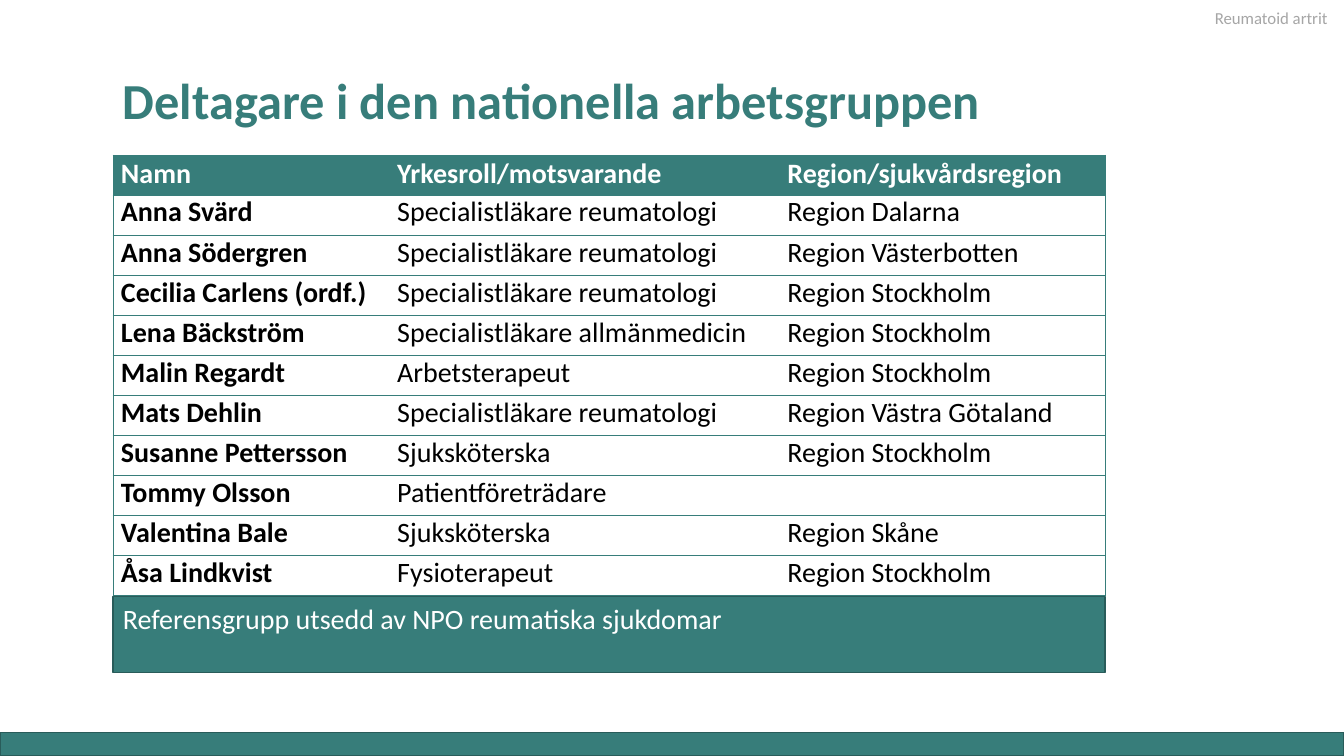
from lxml.etree import SubElement
from pptx import Presentation
from pptx.dml.color import RGBColor
from pptx.enum.shapes import MSO_SHAPE
from pptx.enum.text import MSO_ANCHOR, PP_ALIGN
from pptx.oxml.ns import qn
from pptx.util import Inches, Pt

COLORS = {"teal": "377D7A", "dark_teal": "295C5A", "white": "FFFFFF",
          "black": "000000", "gray": "A6A6A6"}
FONT = "Calibri"

TOPIC = "Reumatoid artrit"
TITLE = "Deltagare i den nationella arbetsgruppen"
HEADER = ("Namn", "Yrkesroll/motsvarande", "Region/sjukvårdsregion")
MEMBERS = [
    ("Anna Svärd", "Specialistläkare reumatologi", "Region Dalarna"),
    ("Anna Södergren", "Specialistläkare reumatologi", "Region Västerbotten"),
    ("Cecilia Carlens (ordf.)", "Specialistläkare reumatologi", "Region Stockholm"),
    ("Lena Bäckström", "Specialistläkare allmänmedicin", "Region Stockholm"),
    ("Malin Regardt", "Arbetsterapeut", "Region Stockholm"),
    ("Mats Dehlin", "Specialistläkare reumatologi", "Region Västra Götaland"),
    ("Susanne Pettersson", "Sjuksköterska", "Region Stockholm"),
    ("Tommy Olsson", "Patientföreträdare", ""),
    ("Valentina Bale", "Sjuksköterska", "Region Skåne"),
    ("Åsa Lindkvist", "Fysioterapeut", "Region Stockholm"),
]
REFERENCE_GROUP = "Referensgrupp utsedd av NPO reumatiska sjukdomar"

SLIDE_WIDTH, SLIDE_HEIGHT = 13.33, 7.5
TABLE_LEFT, TABLE_TOP, TABLE_HEIGHT = 1.12, 1.54, 4.37
COLUMN_WIDTHS = (2.74, 3.87, 3.23)
TABLE_WIDTH = sum(COLUMN_WIDTHS)
FOOTER_HEIGHT = 0.23


def rgb(name):
    return RGBColor.from_string(COLORS[name])


def write(text_frame, text, size, color, bold=False, spacing=None):
    text_frame.text = text
    paragraph = text_frame.paragraphs[0]
    paragraph.alignment = PP_ALIGN.LEFT
    if spacing:
        paragraph.line_spacing = spacing
    for run in paragraph.runs:
        run.font.name = FONT
        run.font.size = Pt(size)
        run.font.bold = bold
        run.font.color.rgb = rgb(color)


def add_text(slide, box, text, size, color, **style):
    shape = slide.shapes.add_textbox(*map(Inches, box))
    shape.text_frame.word_wrap = True
    write(shape.text_frame, text, size, color, **style)
    return shape


def add_bar(slide, box):
    shape = slide.shapes.add_shape(MSO_SHAPE.RECTANGLE, *map(Inches, box))
    shape.shadow.inherit = False
    shape.fill.solid()
    shape.fill.fore_color.rgb = rgb("teal")
    shape.line.color.rgb = rgb("dark_teal")
    shape.line.width = Pt(1)
    return shape


def set_borders(cell, visible_sides):
    """Draw thin teal borders on the given sides (of L, R, T, B) and none elsewhere."""
    properties = cell._tc.get_or_add_tcPr()
    for side in "LRTB":
        line = SubElement(properties, qn(f"a:ln{side}"), w=str(Pt(0.5)))
        if side in visible_sides:
            fill = SubElement(line, qn("a:solidFill"))
            SubElement(fill, qn("a:srgbClr"), val=COLORS["teal"])
        else:
            SubElement(line, qn("a:noFill"))


def add_member_table(slide):
    rows = [HEADER, *MEMBERS]
    box = (TABLE_LEFT, TABLE_TOP, TABLE_WIDTH, TABLE_HEIGHT)
    table = slide.shapes.add_table(len(rows), len(HEADER), *map(Inches, box)).table
    table.horz_banding = False
    for column, width in zip(table.columns, COLUMN_WIDTHS):
        column.width = Inches(width)
    for row_index, values in enumerate(rows):
        table.rows[row_index].height = Inches(TABLE_HEIGHT / len(rows))
        is_header = row_index == 0
        for column_index, value in enumerate(values):
            cell = table.cell(row_index, column_index)
            cell.margin_left = cell.margin_right = Inches(0.08)
            cell.margin_top = cell.margin_bottom = 0
            set_borders(cell, "TB" + {0: "L", 2: "R"}.get(column_index, ""))
            cell.fill.solid()
            cell.fill.fore_color.rgb = rgb("teal" if is_header else "white")
            write(cell.text_frame, value, 20, "white" if is_header else "black",
                  bold=is_header or column_index == 0,
                  spacing=1.06 if is_header else None)


def main():
    presentation = Presentation()
    presentation.slide_width = Inches(SLIDE_WIDTH)
    presentation.slide_height = Inches(SLIDE_HEIGHT)
    slide = presentation.slides.add_slide(presentation.slide_layouts[6])

    add_bar(slide, (0, SLIDE_HEIGHT - FOOTER_HEIGHT, SLIDE_WIDTH, FOOTER_HEIGHT))
    title = add_text(slide, (TABLE_LEFT, 0.67, 10, 0.67), TITLE, 36, "teal",
                     bold=True, spacing=0.9)
    title.text_frame.vertical_anchor = MSO_ANCHOR.BOTTOM
    add_member_table(slide)
    reference_bar = add_bar(slide, (TABLE_LEFT, 5.92, TABLE_WIDTH, 0.75))
    reference_bar.text_frame.vertical_anchor = MSO_ANCHOR.TOP
    write(reference_bar.text_frame, REFERENCE_GROUP, 20, "white")
    add_text(slide, (11.95, 0.03, 1.7, 0.3), TOPIC, 12, "gray")

    presentation.save("out.pptx")


if __name__ == "__main__":
    main()
